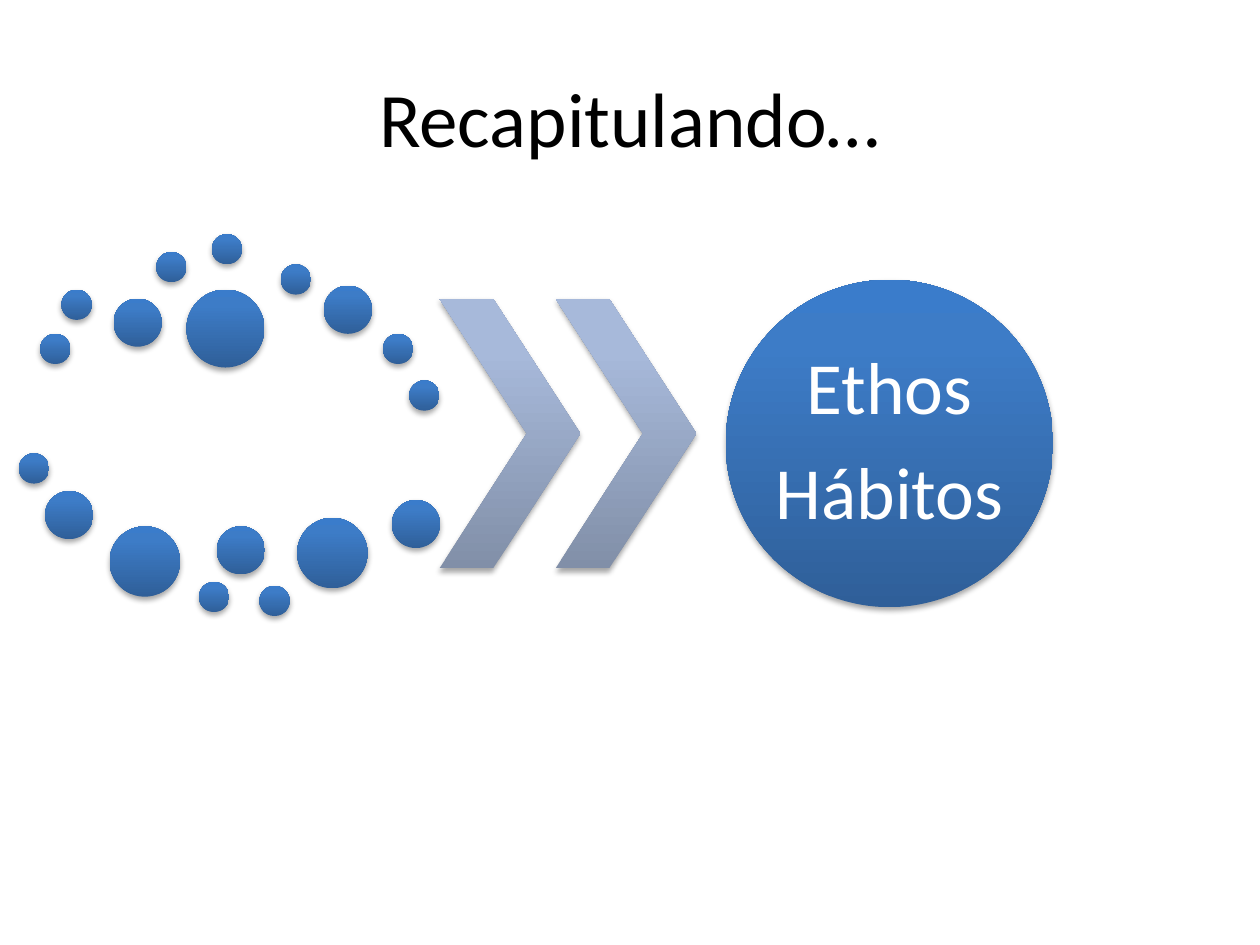
from pptx import Presentation
from pptx.dml.color import RGBColor
from pptx.enum.shapes import MSO_SHAPE
from pptx.enum.text import MSO_ANCHOR, PP_ALIGN
from pptx.oxml import parse_xml
from pptx.oxml.ns import nsdecls
from pptx.util import Cm, Pt

FONT = "Calibri"
BLUE = ("2F5F99", "3D7CC7", "3A7CCB")
PALE_BLUE = ("818FA8", "A7B9DA", "A7BADC")
STOPS = (0, 80, 100)
SMALL, MEDIUM, LARGE, LARGEST = 0.61, 0.97, 1.42, 1.57
DOTS = (
    (0.43, 2.01, SMALL),
    (0.86, 1.12, SMALL),
    (1.91, 1.3, MEDIUM),
    (2.77, 0.36, SMALL),
    (3.89, 0, SMALL),
    (5.28, 0.61, SMALL),
    (6.15, 1.04, MEDIUM),
    (7.34, 2.01, SMALL),
    (7.87, 2.95, SMALL),
    (3.38, 1.12, LARGEST),
    (0, 4.42, SMALL),
    (0.53, 5.18, MEDIUM),
    (1.83, 5.89, LARGE),
    (3.63, 7.01, SMALL),
    (3.99, 5.89, MEDIUM),
    (4.85, 7.09, SMALL),
    (5.61, 5.72, LARGE),
    (7.52, 5.36, MEDIUM),
)


def color(value):
    """Return the colour for a hex string."""
    return RGBColor.from_string(value)


def gradient_element(colors):
    """Return a gradient fill that runs from bottom to top."""
    stops = "".join(
        f'<a:gs pos="{stop * 1000}"><a:srgbClr val="{color(value)}"/></a:gs>'
        for stop, value in zip(STOPS, colors)
    )
    return parse_xml(
        f'<a:gradFill {nsdecls("a")} rotWithShape="1"><a:gsLst>{stops}</a:gsLst>'
        '<a:lin ang="16200000" scaled="0"/></a:gradFill>'
    )


def shadow_element():
    """Return a soft black shadow that falls downwards."""
    return parse_xml(
        f'<a:effectLst {nsdecls("a")}>'
        '<a:outerShdw blurRad="40000" dist="23000" dir="5400000" rotWithShape="0">'
        '<a:srgbClr val="000000"><a:alpha val="35000"/></a:srgbClr>'
        '</a:outerShdw></a:effectLst>'
    )


def add_glossy_shape(slide, kind, left, top, width, height, colors):
    """Add a shape with a gradient, a shadow and no line."""
    shape = slide.shapes.add_shape(kind, Cm(left), Cm(top), Cm(width), Cm(height))
    properties = shape.fill._xPr
    properties.append(gradient_element(colors))
    shape.line.fill.background()
    properties.append(shadow_element())
    return shape


def add_text(slide, left, top, width, height, lines, size, text_color):
    """Add centred lines of text and return their paragraphs."""
    frame = slide.shapes.add_textbox(Cm(left), Cm(top), Cm(width), Cm(height)).text_frame
    frame.word_wrap = True
    frame.vertical_anchor = MSO_ANCHOR.MIDDLE
    frame.margin_left = frame.margin_right = frame.margin_top = frame.margin_bottom = 0
    frame.text = "\n".join(lines)
    for paragraph in frame.paragraphs:
        paragraph.alignment = PP_ALIGN.CENTER
        paragraph.font.name = FONT
        paragraph.font.size = Pt(size)
        paragraph.font.color.rgb = color(text_color)
    return frame.paragraphs


def add_dots(slide, left, top):
    """Scatter the dots from the given corner."""
    for x, y, size in DOTS:
        add_glossy_shape(slide, MSO_SHAPE.OVAL, left + x, top + y, size, size, BLUE)


def add_chevrons(slide, left, top, width, height, step):
    """Add two chevrons side by side."""
    for index in range(2):
        chevron = add_glossy_shape(
            slide, MSO_SHAPE.CHEVRON, left + index * step, top, width, height, PALE_BLUE
        )
        chevron.adjustments[0] = 0.62


def add_result(slide, left, top, size, lines):
    """Add the large circle with its text inside."""
    add_glossy_shape(slide, MSO_SHAPE.OVAL, left, top, size, size, BLUE)
    inset = 0.97
    inner = size - 2 * inset
    for paragraph in add_text(
        slide, left + inset, top + inset, inner, inner, lines, 42, "FFFFFF"
    ):
        paragraph.line_spacing = 0.9
        paragraph.space_after = Pt(14.7)


def main():
    """Build the slide and save it."""
    presentation = Presentation()
    presentation.slide_width, presentation.slide_height = Cm(25.4), Cm(19.05)
    slide = presentation.slides.add_slide(presentation.slide_layouts[6])
    add_text(slide, 1.27, 0.76, 22.86, 3.18, ["Recapitulando…"], 44, "000000")
    add_dots(slide, 0.38, 4.72)
    add_chevrons(slide, 8.86, 6.02, 2.84, 5.44, 2.34)
    add_result(slide, 14.63, 5.64, 6.6, ["Ethos", "Hábitos"])
    presentation.save("out.pptx")


if __name__ == "__main__":
    main()
